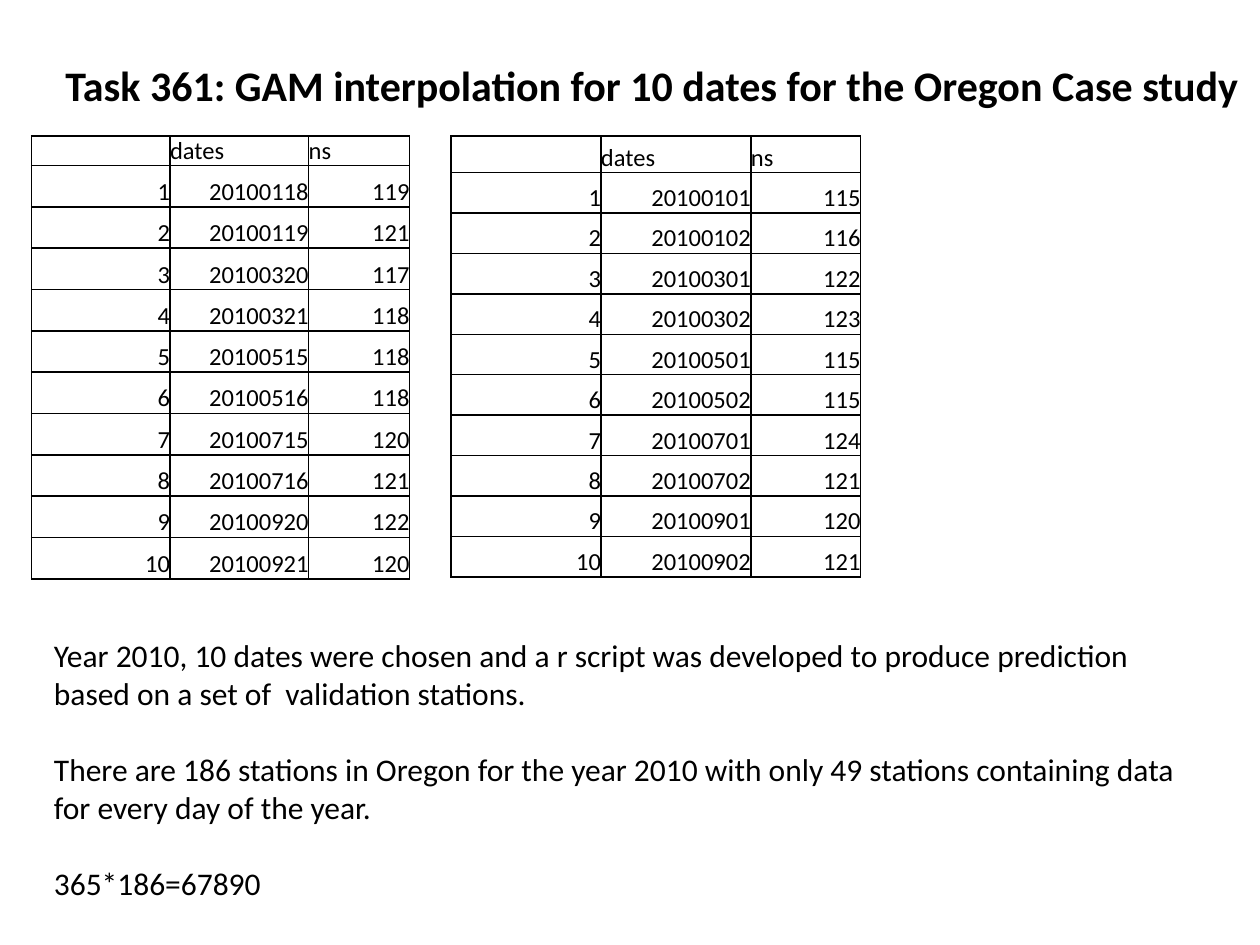
from lxml.etree import SubElement
from pptx import Presentation
from pptx.dml.color import RGBColor
from pptx.enum.text import MSO_ANCHOR as Anchor, MSO_AUTO_SIZE as AutoSize, PP_ALIGN as Align
from pptx.oxml.ns import qn
from pptx.util import Inches, Pt

FONT, INK = "Calibri", "000000"
CELL_SIZE = 14


def write(para, text, size, bold=False):
    span = para.add_run()
    span.text = text
    span.font.color.rgb = RGBColor.from_string(INK)
    for name, value in {"name": FONT, "size": Pt(size), "bold": bold}.items():
        setattr(span.font, name, value)


def add_borders(cell):
    props = cell._tc.get_or_add_tcPr()
    for side in ("a:lnL", "a:lnR", "a:lnT", "a:lnB"):
        line = SubElement(props, qn(side), w=str(Pt(1)))
        SubElement(SubElement(line, qn("a:solidFill")), qn("a:srgbClr"), val=INK)


deck = Presentation()
deck.slide_width, deck.slide_height = Inches(10), Inches(7.5)
page = deck.slides.add_slide(deck.slide_layouts[6])

# Title and notes: left, top, width, height, size, bold, paragraphs
texts = [
    (0.42, 0.42, 9.58, 0.5, 24, True,
     ["Task 361: GAM interpolation for 10 dates for the Oregon Case study"]),
    (0.33, 5, 9.33, 2.22, 18, False,
     ["Year 2010, 10 dates were chosen and a r script was developed to produce "
      "prediction based on a set of  validation stations.",
      "There are 186 stations in Oregon for the year 2010 with only 49 stations "
      "containing data for every day of the year.",
      "365*186=67890"]),
]
for left, top, width, height, size, bold, lines in texts:
    box = page.shapes.add_textbox(*map(Inches, (left, top, width, height)))
    frame = box.text_frame
    frame.word_wrap, frame.auto_size = True, AutoSize.SHAPE_TO_FIT_TEXT
    for index, line in enumerate(lines):
        para = frame.paragraphs[0] if index == 0 else frame.add_paragraph()
        if index:
            para.space_before = Pt(22)  # one line of air between paragraphs
        write(para, line, size, bold)

# Date tables: left, height, header height, column widths, dates, station counts
tables = [
    (0.25, 3.51, 0.23, (1.1, 1.1, 0.8),
     (20100118, 20100119, 20100320, 20100321, 20100515,
      20100516, 20100715, 20100716, 20100920, 20100921),
     (119, 121, 117, 118, 118, 118, 120, 121, 122, 120)),
    (3.58, 3.5, 0.29, (1.19, 1.19, 0.87),
     (20100101, 20100102, 20100301, 20100302, 20100501,
      20100502, 20100701, 20100702, 20100901, 20100902),
     (115, 116, 122, 123, 115, 115, 124, 121, 120, 121)),
]
cell_format = {"margin_left": 0, "margin_right": 0, "margin_top": 0,
               "margin_bottom": 0, "vertical_anchor": Anchor.BOTTOM}
for left, height, header, widths, dates, counts in tables:
    rows = [("", "dates", "ns"), *zip(range(1, len(dates) + 1), dates, counts)]
    grid = page.shapes.add_table(len(rows), len(widths), Inches(left), Inches(1.08),
                                 Inches(sum(widths)), Inches(height)).table
    grid.first_row = grid.horz_banding = False
    for column, width in zip(grid.columns, widths):
        column.width = Inches(width)
    for r, row in enumerate(rows):
        grid.rows[r].height = Inches((height - header) / len(dates) if r else header)
        for c, value in enumerate(row):
            cell = grid.cell(r, c)
            for name, setting in cell_format.items():
                setattr(cell, name, setting)
            add_borders(cell)
            cell.fill.background()
            para = cell.text_frame.paragraphs[0]
            para.alignment = Align.RIGHT if r else Align.LEFT
            if value == "":
                # keeps the empty corner as low as its row
                SubElement(para._p, qn("a:endParaRPr"), sz=str(CELL_SIZE * 100))
            else:
                write(para, str(value), CELL_SIZE)

deck.save("out.pptx")
